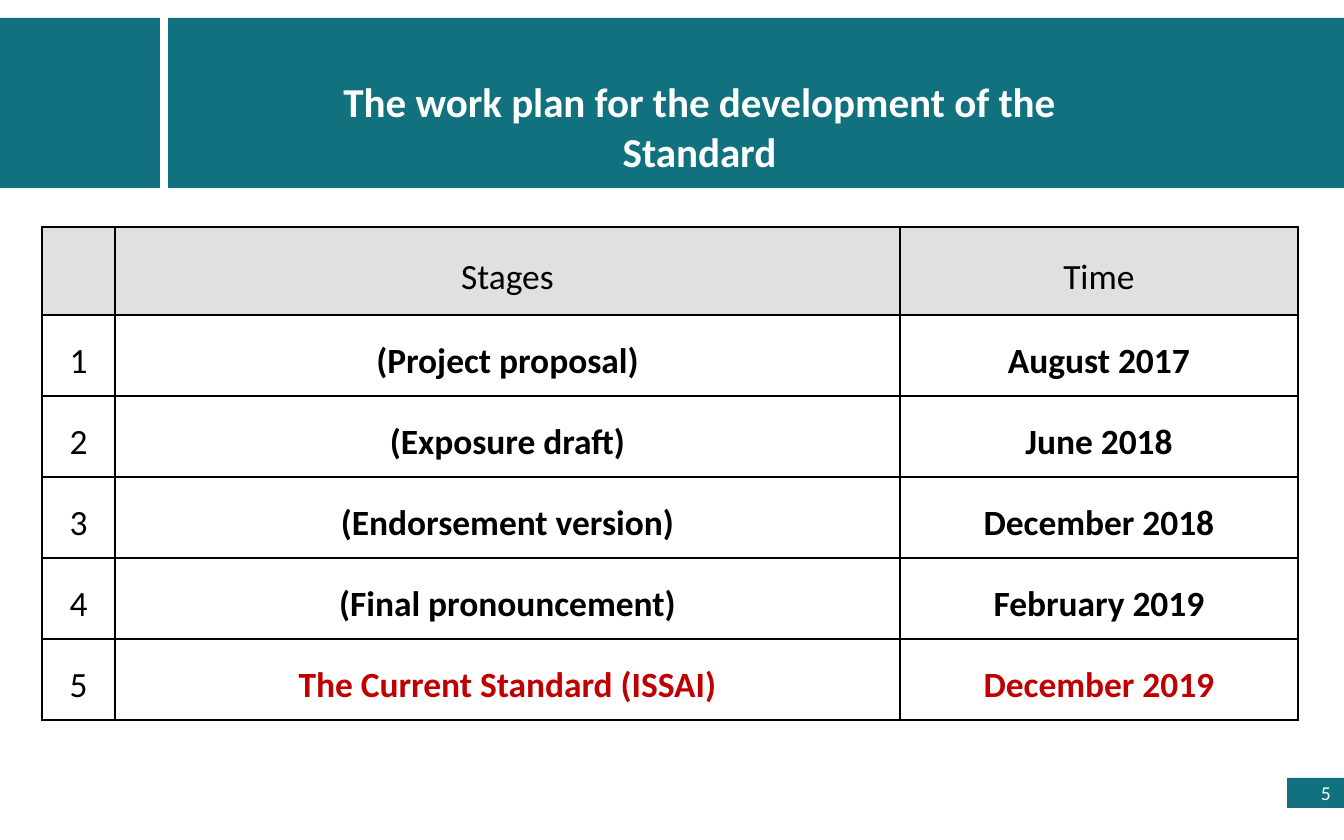
from lxml import etree
from pptx import Presentation, util as u
from pptx.dml.color import RGBColor
from pptx.enum import shapes, text
from pptx.oxml import ns

PX = 914400 / 134.4
FONT = "Calibri"
TEAL = RGBColor(0x11, 0x71, 0x7E)
GREY = RGBColor(0xE0, 0xE0, 0xE0)
RED = RGBColor(0xC0, 0x00, 0x00)
WHITE = RGBColor(0xFF, 0xFF, 0xFF)
BLACK = RGBColor(0x00, 0x00, 0x00)

COLUMNS = (73, 785, 398)
HEADER_HEIGHT, ROW_HEIGHT = 88, 81
STAGES = [
    ("(Project proposal)", "August 2017"),
    ("(Exposure draft)", "June 2018"),
    ("(Endorsement version)", "December 2018"),
    ("(Final pronouncement)", "February 2019"),
    ("The Current Standard (ISSAI)", "December 2019"),
]


def px(n):
    return u.Emu(round(n * PX))


def style(p, size, color, align, bold=False):
    p.alignment = align
    for r in p.runs:
        r.font.name = FONT
        r.font.size = u.Pt(size)
        r.font.bold = bold
        r.font.color.rgb = color


def add_block(s, x, y, w, h):
    """Add a plain teal rectangle."""
    sp = s.shapes.add_shape(shapes.MSO_SHAPE.RECTANGLE, px(x), px(y), px(w), px(h))
    sp.shadow.inherit = False
    sp.fill.solid()
    sp.fill.fore_color.rgb = TEAL
    sp.line.fill.background()
    return sp


def add_page_number(s, number):
    tf = add_block(s, 1287, 778, 57, 30).text_frame
    tf.text = str(number)
    tf.vertical_anchor = text.MSO_ANCHOR.MIDDLE
    style(tf.paragraphs[0], 10.5, WHITE, text.PP_ALIGN.RIGHT)


def set_title(s, words):
    sp = s.shapes.title
    sp.left, sp.top, sp.width, sp.height = px(288), px(70), px(823), px(113)
    s.shapes.element.append(sp.element)  # bring in front of the banner
    tf = sp.text_frame
    tf.text = words
    tf.word_wrap = True
    tf.auto_size = text.MSO_AUTO_SIZE.SHAPE_TO_FIT_TEXT
    tf.vertical_anchor = text.MSO_ANCHOR.TOP
    style(tf.paragraphs[0], 22, WHITE, text.PP_ALIGN.CENTER, bold=True)


def set_borders(cell):
    tc_pr = cell._tc.get_or_add_tcPr()
    for side in ("a:lnL", "a:lnR", "a:lnT", "a:lnB"):
        ln = etree.SubElement(tc_pr, ns.qn(side), w=str(u.Pt(1)))
        fill = etree.SubElement(ln, ns.qn("a:solidFill"))
        etree.SubElement(fill, ns.qn("a:srgbClr"), val=str(BLACK))


def fill_cell(cell, words, color, bold, shaded):
    set_borders(cell)
    if shaded:
        cell.fill.solid()
        cell.fill.fore_color.rgb = GREY
    else:
        cell.fill.background()
    cell.margin_left = cell.margin_right = u.Inches(0.07)
    cell.margin_top = cell.margin_bottom = 0
    cell.vertical_anchor = text.MSO_ANCHOR.MIDDLE
    cell.text = words
    p = cell.text_frame.paragraphs[0]
    p.line_spacing = 1.3
    style(p, 19, color, text.PP_ALIGN.CENTER, bold)


def add_plan(s):
    rows = [("", "Stages", "Time")]
    rows += [(str(n), *stage) for n, stage in enumerate(STAGES, 1)]
    heights = [HEADER_HEIGHT] + [ROW_HEIGHT] * len(STAGES)
    table = s.shapes.add_table(len(rows), len(COLUMNS), px(42), px(227),
                               px(sum(COLUMNS)), px(sum(heights))).table
    table.first_row = table.horz_banding = False
    for column, width in zip(table.columns, COLUMNS):
        column.width = px(width)
    for i, row in enumerate(rows):
        table.rows[i].height = px(heights[i])
        for j, words in enumerate(row):
            entry = i > 0 and j > 0
            color = RED if entry and i == len(STAGES) else BLACK
            fill_cell(table.cell(i, j), words, color, bold=entry, shaded=i == 0)


def main():
    prs = Presentation()
    prs.slide_width, prs.slide_height = px(1344), px(840)
    s = prs.slides.add_slide(prs.slide_layouts[5])
    add_block(s, 168, 18, 1176, 170)
    add_block(s, 0, 18, 160, 170)
    add_page_number(s, 5)
    set_title(s, "The work plan for the development of the Standard")
    add_plan(s)
    prs.save("out.pptx")


if __name__ == "__main__":
    main()
